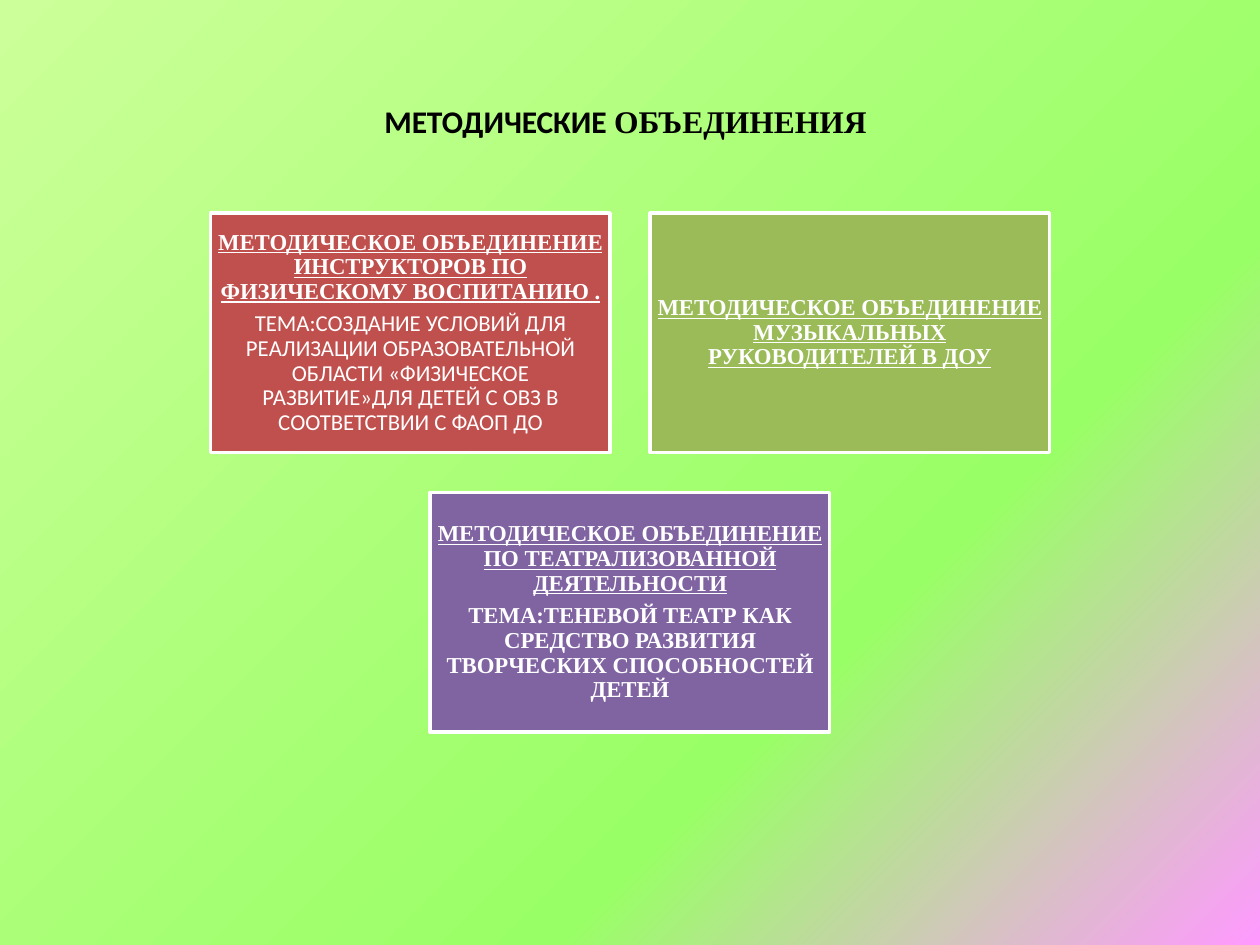
from pptx import Presentation
from pptx.dml.color import RGBColor as RGB
from pptx.enum.shapes import MSO_SHAPE as Form
from pptx.enum.text import MSO_ANCHOR as Anchor, MSO_AUTO_SIZE as Fit, PP_ALIGN as Align
from pptx.oxml import parse_xml
from pptx.oxml.ns import nsdecls, qn
from pptx.util import Inches, Pt

WIDE, HIGH = 10, 7.5
BOX = 3.17
TALL = BOX * 0.6
GAP = BOX * 0.1
TOP = 1.69
SERIF, SANS = "Times New Roman", "Calibri"
HEAD = {"name": SERIF, "bold": True, "underline": True}
PLAIN = {"name": SANS, "bold": False, "underline": False}
BOLD = {"name": SERIF, "bold": True, "underline": False}
STOPS = [(0, "FF99FF"), (32, "99FF66"), (100, "CCFF99")]
ROWS = [
    [
        ("C0504D", [
            ("МЕТОДИЧЕСКОЕ ОБЪЕДИНЕНИЕ ИНСТРУКТОРОВ ПО ФИЗИЧЕСКОМУ ВОСПИТАНИЮ .", HEAD),
            ("ТЕМА:СОЗДАНИЕ УСЛОВИЙ ДЛЯ РЕАЛИЗАЦИИ ОБРАЗОВАТЕЛЬНОЙ ОБЛАСТИ "
             "«ФИЗИЧЕСКОЕ РАЗВИТИЕ»ДЛЯ ДЕТЕЙ С ОВЗ В СООТВЕТСТВИИ С ФАОП ДО", PLAIN),
        ]),
        ("9BBB59", [
            ("МЕТОДИЧЕСКОЕ ОБЪЕДИНЕНИЕ МУЗЫКАЛЬНЫХ РУКОВОДИТЕЛЕЙ В ДОУ", HEAD),
        ]),
    ],
    [
        ("8064A2", [
            ("МЕТОДИЧЕСКОЕ ОБЪЕДИНЕНИЕ ПО ТЕАТРАЛИЗОВАННОЙ ДЕЯТЕЛЬНОСТИ", HEAD),
            ("ТЕМА:ТЕНЕВОЙ ТЕАТР КАК СРЕДСТВО РАЗВИТИЯ ТВОРЧЕСКИХ СПОСОБНОСТЕЙ ДЕТЕЙ", BOLD),
        ]),
    ],
]


def tint(part, code):
    part.rgb = RGB.from_string(code)


def style(item, looks):
    for name, value in looks.items():
        setattr(item, name, value)


def write(para, text, size, code, looks):
    run = para.add_run()
    run.text = text
    style(run.font, {"size": Pt(size), **looks})
    tint(run.font.color, code)


def paint(slide):
    slide.background.fill.gradient()
    old = slide.element.find(".//" + qn("a:gradFill"))
    stops = "".join(
        f'<a:gs pos="{pos * 1000}"><a:srgbClr val="{code}"/></a:gs>' for pos, code in STOPS
    )
    new = parse_xml(
        f'<a:gradFill {nsdecls("a")} rotWithShape="1"><a:gsLst>{stops}</a:gsLst>'
        '<a:path path="circle"><a:fillToRect l="100000" t="100000"/></a:path></a:gradFill>'
    )
    old.getparent().replace(old, new)


def title(slide):
    area = [Inches(n) for n in (2.95, 0.76, 4.03, 0.4)]
    frame = slide.shapes.add_textbox(*area).text_frame
    style(frame, {"word_wrap": False, "auto_size": Fit.SHAPE_TO_FIT_TEXT})
    para = frame.paragraphs[0]
    para.alignment = Align.CENTER
    write(para, "МЕТОДИЧЕСКИЕ ", 18, "000000", {"name": SANS, "bold": True})
    write(para, "ОБЪЕДИНЕНИЯ", 18, "000000", {"name": SERIF, "bold": True})


def card(slide, left, top, code, texts):
    area = [Inches(n) for n in (left, top, BOX, TALL)]
    shape = slide.shapes.add_shape(Form.RECTANGLE, *area)
    shape.shadow.inherit = False
    shape.fill.solid()
    tint(shape.fill.fore_color, code)
    tint(shape.line.color, "FFFFFF")
    shape.line.width = Pt(2)
    frame = shape.text_frame
    sides = ("left", "top", "right", "bottom")
    pads = {f"margin_{side}": Inches(0.05) for side in sides}
    style(frame, {"word_wrap": True, "vertical_anchor": Anchor.MIDDLE, **pads})
    for i, (text, looks) in enumerate(texts):
        para = frame.add_paragraph() if i else frame.paragraphs[0]
        style(para, {"alignment": Align.CENTER, "line_spacing": 0.9, "space_after": Pt(4.6)})
        write(para, text, 13, "FFFFFF", looks)


def main():
    deck = Presentation()
    style(deck, {"slide_width": Inches(WIDE), "slide_height": Inches(HIGH)})
    slide = deck.slides.add_slide(deck.slide_layouts[6])
    paint(slide)
    for r, row in enumerate(ROWS):
        span = len(row) * (BOX + GAP) - GAP
        for c, (code, texts) in enumerate(row):
            left = (WIDE - span) / 2 + c * (BOX + GAP)
            card(slide, left, TOP + r * (TALL + GAP), code, texts)
    title(slide)
    deck.save("out.pptx")


if __name__ == "__main__":
    main()
